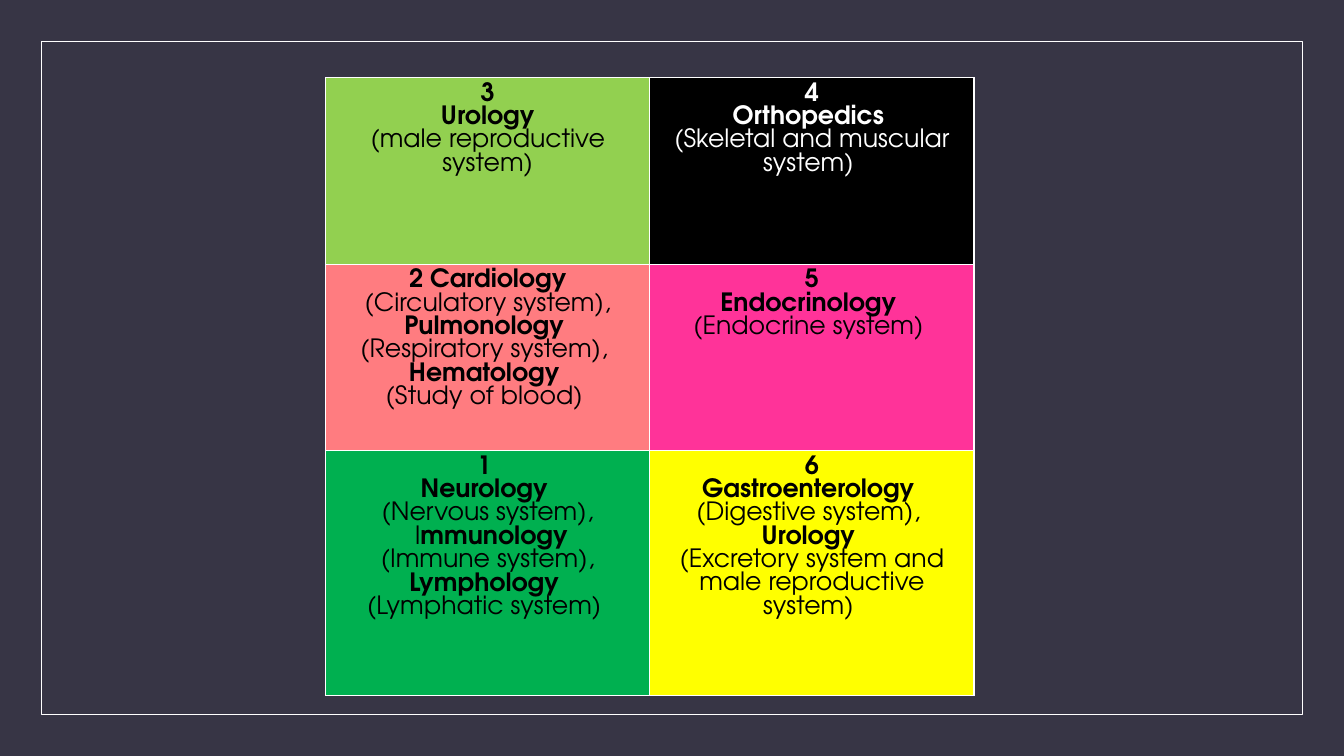
"""Build a slide with a six-cell table of medical specialties."""
from lxml.etree import SubElement
from pptx import Presentation
from pptx.dml.color import RGBColor
from pptx.enum.shapes import MSO_SHAPE
from pptx.enum.text import PP_ALIGN
from pptx.oxml.ns import qn
from pptx.util import Inches, Pt

WIDE, HIGH, EDGE = 13.33, 7.5, 0.41
LEFT, TOP, COL = 3.23, 0.77, 3.215
ROWS = [1.85, 1.85, 2.43]
FONT = {"name": "TeX Gyre Adventor", "size": Pt(18)}
PARA = {"alignment": PP_ALIGN.CENTER, "line_spacing": Pt(16.7),
        "space_before": Pt(0), "space_after": Pt(0)}
BLACK, WHITE = "000000", "FFFFFF"

# Text between asterisks is bold.
CELLS = [
    [("92D050", BLACK, ["*3*", "*Urology*", "(male reproductive system)"]),
     (BLACK, WHITE, ["*4*", "*Orthopedics *",
                     "(Skeletal and muscular system) "])],
    [("FF7C80", BLACK, ["*2 Cardiology*", " (Circulatory system), ",
                        "*Pulmonology *", "(Respiratory system), ",
                        "*Hematology *", "(Study of blood) "]),
     ("FF3399", BLACK, ["*5*", "*Endocrinology *", "(Endocrine system) "])],
    [("00B050", BLACK, ["*1 *", "*Neurology *", "(Nervous system),",
                        " I*mmunology*", " (Immune system), ",
                        "*Lymphology *", "(Lymphatic system) "]),
     ("FFFF00", BLACK, ["*6*", "*Gastroenterology *", "(Digestive system), ",
                        "*Urology *",
                        "(Excretory system and male reproductive system) "])],
]


def paint(part, color):
    part.solid()
    part.fore_color.rgb = RGBColor.from_string(color)


def style(item, values):
    for name, value in values.items():
        setattr(item, name, value)


def border(cell):
    props = cell._tc.get_or_add_tcPr()
    for spot, side in enumerate(("lnL", "lnR", "lnT", "lnB")):
        line = SubElement(props, qn("a:" + side), w=str(Pt(1)))
        fill = SubElement(line, qn("a:solidFill"))
        SubElement(fill, qn("a:srgbClr"), val=WHITE)
        props.insert(spot, line)


def write(cell, color, lines):
    frame = cell.text_frame
    for at, text in enumerate(lines):
        para = frame.add_paragraph() if at else frame.paragraphs[0]
        style(para, PARA)
        for turn, part in enumerate(text.split("*")):
            if part:
                run = para.add_run()
                run.text = part
                style(run.font, {**FONT, "bold": turn % 2 == 1})
                paint(run.font.fill, color)


def main():
    deck = Presentation()
    deck.slide_width, deck.slide_height = Inches(WIDE), Inches(HIGH)
    slide = deck.slides.add_slide(deck.slide_layouts[6])
    paint(slide.background.fill, "373545")

    frame = slide.shapes.add_shape(
        MSO_SHAPE.RECTANGLE, Inches(EDGE), Inches(EDGE),
        Inches(WIDE - 2 * EDGE), Inches(HIGH - 2 * EDGE))
    frame.shadow.inherit = False
    frame.fill.background()
    paint(frame.line.fill, WHITE)
    frame.line.width = Pt(0.5)

    table = slide.shapes.add_table(
        len(ROWS), 2, Inches(LEFT), Inches(TOP),
        Inches(2 * COL), Inches(sum(ROWS))).table
    for col in table.columns:
        col.width = Inches(COL)
    for row, high, cells in zip(table.rows, ROWS, CELLS):
        row.height = Inches(high)
        for cell, (fill, color, lines) in zip(row.cells, cells):
            paint(cell.fill, fill)
            border(cell)
            write(cell, color, lines)
    deck.save("out.pptx")


if __name__ == "__main__":
    main()
